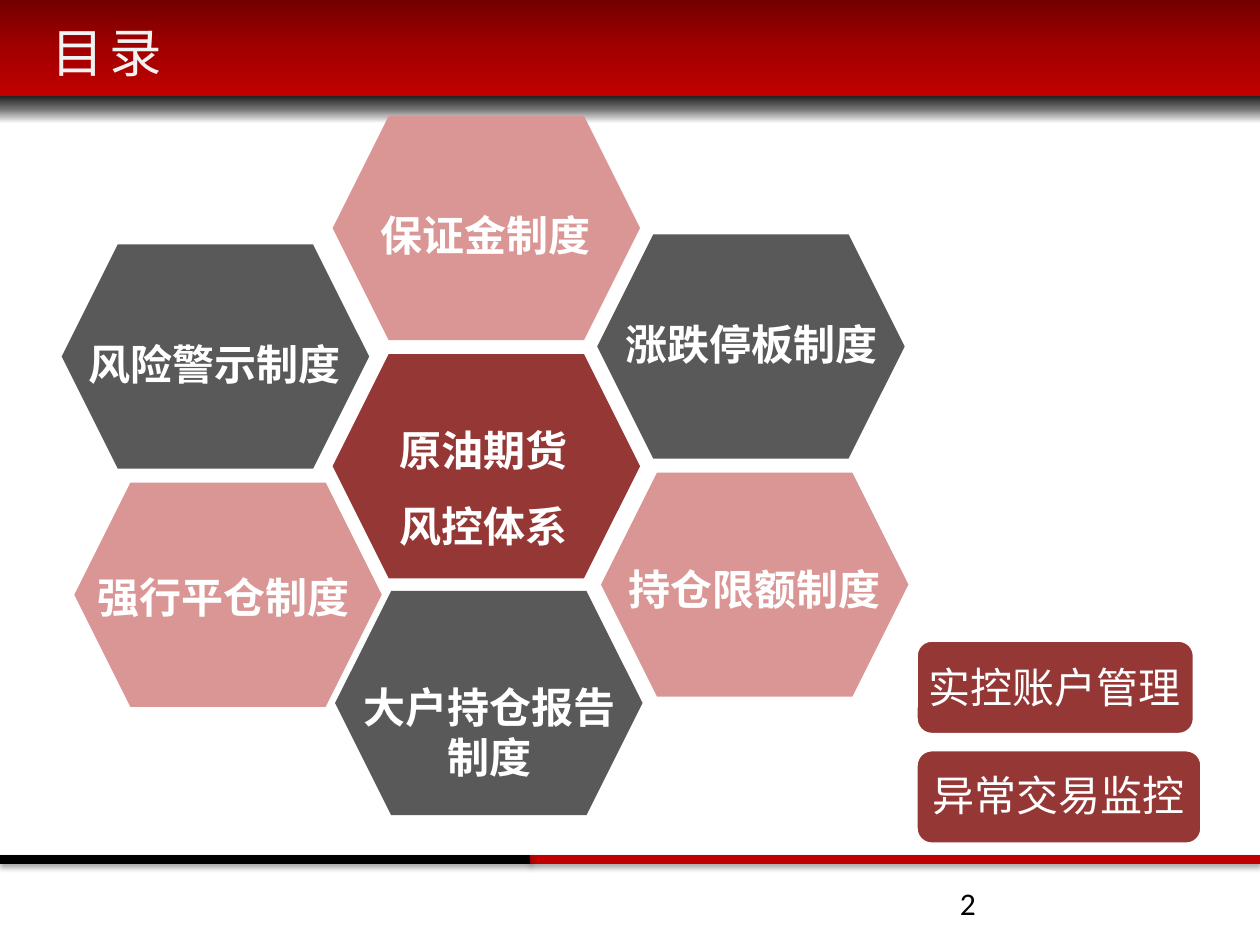
from dataclasses import dataclass

from lxml import etree
from pptx import Presentation
from pptx import util as u
from pptx.dml.color import RGBColor
from pptx.enum import shapes, text
from pptx.oxml import parse_xml
from pptx.oxml.ns import nsdecls, qn


@dataclass(frozen=True)
class Theme:
    pink: str = "D99694"
    gray: str = "595959"
    wine: str = "953735"
    red: str = "C00000"
    black: str = "000000"
    white: str = "FFFFFF"
    pale: str = "F2F2F2"
    bar: tuple = ((0, "720000"), (50, "A20000"), (100, "C00000"))
    shade: tuple = ((0, "202020"), (50, "777777"), (100, "FFFFFF"))
    cjk: str = "Noto Sans CJK SC"
    latin: str = "Calibri"
    title: int = 30
    label: int = 24
    page: int = 18


class Deck:
    def __init__(self, theme):
        self.theme = theme
        self.show = Presentation()
        self.show.slide_width = u.Inches(10)
        self.show.slide_height = u.Inches(7.5)
        self.slide = self.show.slides.add_slide(self.show.slide_layouts[6])

    def shape(self, kind, at, fill=None, line=None, home=None):
        item = (home or self.slide).shapes.add_shape(kind, *map(u.Inches, at))
        item.shadow.inherit = False
        if fill:
            item.fill.solid()
            item.fill.fore_color.rgb = RGBColor.from_string(fill)
        if line:
            item.line.color.rgb = RGBColor.from_string(line)
            item.line.width = u.Pt(2)
        else:
            item.line.fill.background()
        return item

    def fade(self, at, stops):
        item = self.shape(shapes.MSO_SHAPE.RECTANGLE, at)
        marks = "".join(
            f'<a:gs pos="{pos * 1000}"><a:srgbClr val="{hue}"/></a:gs>'
            for pos, hue in stops)
        grad = parse_xml(
            f'<a:gradFill {nsdecls("a")}><a:gsLst>{marks}</a:gsLst>'
            '<a:lin ang="5400000" scaled="0"/></a:gradFill>')
        item._element.spPr.find(qn("a:prstGeom")).addnext(grad)

    def rule(self, start, end, y, color):
        item = self.slide.shapes.add_connector(
            shapes.MSO_CONNECTOR.STRAIGHT,
            *map(u.Inches, (start, y, end, y)))
        item.line.color.rgb = RGBColor.from_string(color)
        item.line.width = u.Pt(5)
        item._element.spPr.append(parse_xml(
            f'<a:effectLst {nsdecls("a")}><a:outerShdw blurRad="39370" '
            'dist="22860" dir="5400000" rotWithShape="0">'
            '<a:srgbClr val="000000"><a:alpha val="35000"/></a:srgbClr>'
            '</a:outerShdw></a:effectLst>'))

    def text(self, at, lines, home=None, align=text.PP_ALIGN.CENTER,
             anchor=text.MSO_ANCHOR.TOP, space=1.0, gap=0, color=None, **form):
        box = (home or self.slide).shapes.add_textbox(*map(u.Inches, at))
        frame = box.text_frame
        frame.word_wrap = True
        frame.vertical_anchor = anchor
        form = {"name": self.theme.cjk, "size": u.Pt(self.theme.label),
                "bold": False} | form
        for num, line in enumerate(lines):
            para = frame.add_paragraph() if num else frame.paragraphs[0]
            para.alignment = align
            para.line_spacing = space
            run = para.add_run()
            run.text = line
            for key, value in form.items():
                setattr(run.font, key, value)
            run.font.color.rgb = RGBColor.from_string(
                color or self.theme.white)
            props = run._r.get_or_add_rPr()
            etree.SubElement(props, qn("a:ea")).set("typeface", form["name"])
            if gap:
                props.set("spc", str(gap * 100))

    def tile(self, kind, at, fill, zone, lines, line=None, **form):
        group = self.slide.shapes.add_group_shape()
        home = Holder(group.shapes)
        self.shape(kind, at, fill, line, home)
        self.text(zone, lines, home, **form)

    def hexa(self, at, fill, zone, lines, space=1.0):
        self.tile(shapes.MSO_SHAPE.HEXAGON, (*at, 2.44, 1.78), fill, zone,
                  lines, space=space, bold=True)

    def badge(self, top, width, zone, label):
        self.tile(shapes.MSO_SHAPE.ROUNDED_RECTANGLE,
                  (7.27, top, width, 0.75), self.theme.wine, zone, [label],
                  line=self.theme.white)


@dataclass
class Holder:
    shapes: object


def main():
    theme = Theme()
    deck = Deck(theme)
    deck.fade((0, 0.76, 10, 0.22), theme.shade)
    deck.fade((0, 0, 10, 0.76), theme.bar)
    deck.rule(4.21, 10, 6.82, theme.red)
    deck.rule(0, 4.21, 6.82, theme.black)
    side = {"align": text.PP_ALIGN.LEFT, "anchor": text.MSO_ANCHOR.MIDDLE}
    deck.text((0.31, 0.1, 9, 0.61), ["目录"], color=theme.pale, gap=3,
              size=u.Pt(theme.title), **side)
    deck.text((7.52, 6.97, 2.33, 0.4), ["2"], color=theme.black,
              name=theme.latin, size=u.Pt(theme.page), **side)

    cells = (
        ((2.64, 0.92), theme.pink, (2.72, 1.61, 2.26, 0.5), ["保证金制度"]),
        ((0.49, 1.94), theme.gray, (0.43, 2.64, 2.55, 0.5), ["风险警示制度"]),
        ((4.74, 1.86), theme.gray, (4.69, 2.48, 2.55, 0.5), ["涨跌停板制度"]),
        ((4.77, 3.75), theme.pink, (4.83, 4.42, 2.32, 0.5), ["持仓限额制度"]),
        ((2.64, 2.81), theme.wine, (2.7, 3.12, 2.28, 1.31),
         ["原油期货", "风控体系"], 1.5),
        ((0.59, 3.83), theme.pink, (0.66, 4.49, 2.23, 0.5), ["强行平仓制度"]),
        ((2.66, 4.69), theme.gray, (2.61, 5.36, 2.55, 0.91),
         ["大户持仓报告", "制度"]),
    )
    for cell in cells:
        deck.hexa(*cell)
    deck.badge(5.95, 2.27, (7.2, 6.06, 2.4, 0.5), "异常交易监控")
    deck.badge(5.08, 2.21, (7.2, 5.2, 2.34, 0.5), "实控账户管理")
    deck.show.save("out.pptx")


if __name__ == "__main__":
    main()
